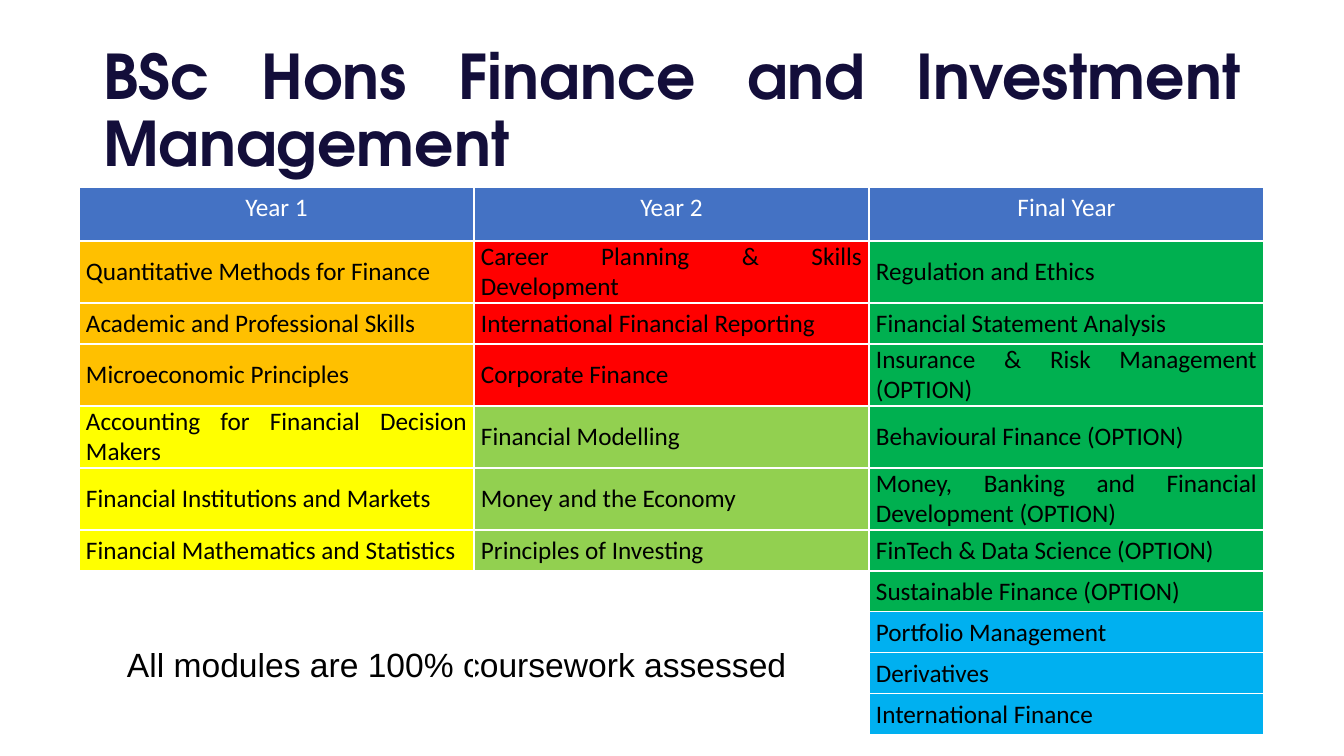
from lxml import etree
from pptx import Presentation
from pptx import util as u
from pptx.dml.color import RGBColor
from pptx.enum import text
from pptx.oxml.ns import qn

TITLE = "BSc Hons Finance and Investment Management"
NOTE = "All modules are 100% coursework assessed"
ORANGE, YELLOW, RED = "FFC000", "FFFF00", "FF0000"
LIME, GREEN, BLUE = "92D050", "00B050", "00B0F0"
BLACK, WHITE, NAVY, HEADER = "000000", "FFFFFF", "130E3A", "4472C4"

# year -> groups of (fill, modules)
YEARS = {
    "Year 1": [
        (ORANGE, ["Quantitative Methods for Finance",
                  "Academic and Professional Skills",
                  "Microeconomic Principles"]),
        (YELLOW, ["Accounting for Financial Decision Makers",
                  "Financial Institutions and Markets",
                  "Financial Mathematics and Statistics"]),
    ],
    "Year 2": [
        (RED, ["Career Planning & Skills Development",
               "International Financial Reporting",
               "Corporate Finance"]),
        (LIME, ["Financial Modelling",
                "Money and the Economy",
                "Principles of Investing"]),
    ],
    "Final Year": [
        (GREEN, ["Regulation and Ethics",
                 "Financial Statement Analysis",
                 "Insurance & Risk Management (OPTION)",
                 "Behavioural Finance (OPTION)",
                 "Money, Banking and Financial Development (OPTION)",
                 "FinTech & Data Science (OPTION)",
                 "Sustainable Finance (OPTION)"]),
        (BLUE, ["Portfolio Management",
                "Derivatives",
                "International Finance"]),
    ],
}
HEAD_H, ONE_LINE, TWO_LINES = 54, 41, 62
TWO_LINE_ROWS = {1, 3, 4, 5}
ROWS = [HEAD_H] + [TWO_LINES if i in TWO_LINE_ROWS else ONE_LINE
                   for i in range(1, 11)]
COL_W, INSET = 395, 7


def px(n):
    return u.Emu(round(n * 914400 / 100.8))


def rgb(value):
    return RGBColor.from_string(value)


def write(tf, words, size, font, color, align, bold=False):
    tf.text = words
    p = tf.paragraphs[0]
    p.alignment = align
    f = p.runs[0].font
    f.size, f.name, f.bold = u.Pt(size), font, bold
    f.color.rgb = rgb(color)
    return p


def border(cell, bottom=1):
    """Draw white lines round a cell; call before filling it."""
    pr = cell._tc.get_or_add_tcPr()
    for side, width in zip("LRTB", (1, 1, 1, bottom)):
        ln = etree.SubElement(pr, qn(f"a:ln{side}"), w=str(u.Pt(width)))
        fill = etree.SubElement(ln, qn("a:solidFill"))
        etree.SubElement(fill, qn("a:srgbClr"), val=WHITE)


def fill_cell(cell, words, fill, color, align):
    cell.fill.solid()
    cell.fill.fore_color.rgb = rgb(fill)
    write(cell.text_frame, words, 18, "Calibri", color, align)


def add_modules(s):
    tbl = s.shapes.add_table(len(ROWS), len(YEARS), px(79), px(187),
                             px(COL_W * len(YEARS)), px(sum(ROWS))).table
    tbl.first_row = tbl.horz_banding = False
    for row, height in zip(tbl.rows, ROWS):
        row.height = px(height)
    for col in tbl.columns:
        col.width = px(COL_W)
    for cell in tbl.iter_cells():
        border(cell)
        cell.fill.background()
    for c, (year, groups) in enumerate(YEARS.items()):
        fill_cell(tbl.cell(0, c), year, HEADER, WHITE, text.PP_ALIGN.CENTER)
        modules = [(name, fill) for fill, names in groups for name in names]
        for r, (name, fill) in enumerate(modules, 1):
            cell = tbl.cell(r, c)
            cell.margin_left = cell.margin_right = px(INSET)
            cell.margin_top = cell.margin_bottom = 0
            cell.vertical_anchor = text.MSO_ANCHOR.MIDDLE
            fill_cell(cell, name, fill, BLACK, text.PP_ALIGN.JUSTIFY)
    tbl.cell(8, 0).merge(tbl.cell(8, 1))


def main():
    prs = Presentation()
    prs.slide_width, prs.slide_height = px(1344), px(756)
    s = prs.slides.add_slide(prs.slide_layouts[5])

    title = s.shapes.title
    title.left, title.top, title.width, title.height = map(px, (93, 40, 1159, 146))
    tf = title.text_frame
    tf.vertical_anchor = text.MSO_ANCHOR.MIDDLE
    tf.auto_size = text.MSO_AUTO_SIZE.NONE
    p = write(tf, TITLE, 44, "TeX Gyre Adventor", NAVY, text.PP_ALIGN.JUSTIFY, True)
    p.line_spacing = 0.9

    tf = s.shapes.add_textbox(*map(px, (117, 639, 705, 50))).text_frame
    tf.word_wrap = True
    write(tf, NOTE, 24, "Arial", BLACK, text.PP_ALIGN.LEFT)

    add_modules(s)
    prs.save("out.pptx")


if __name__ == "__main__":
    main()
